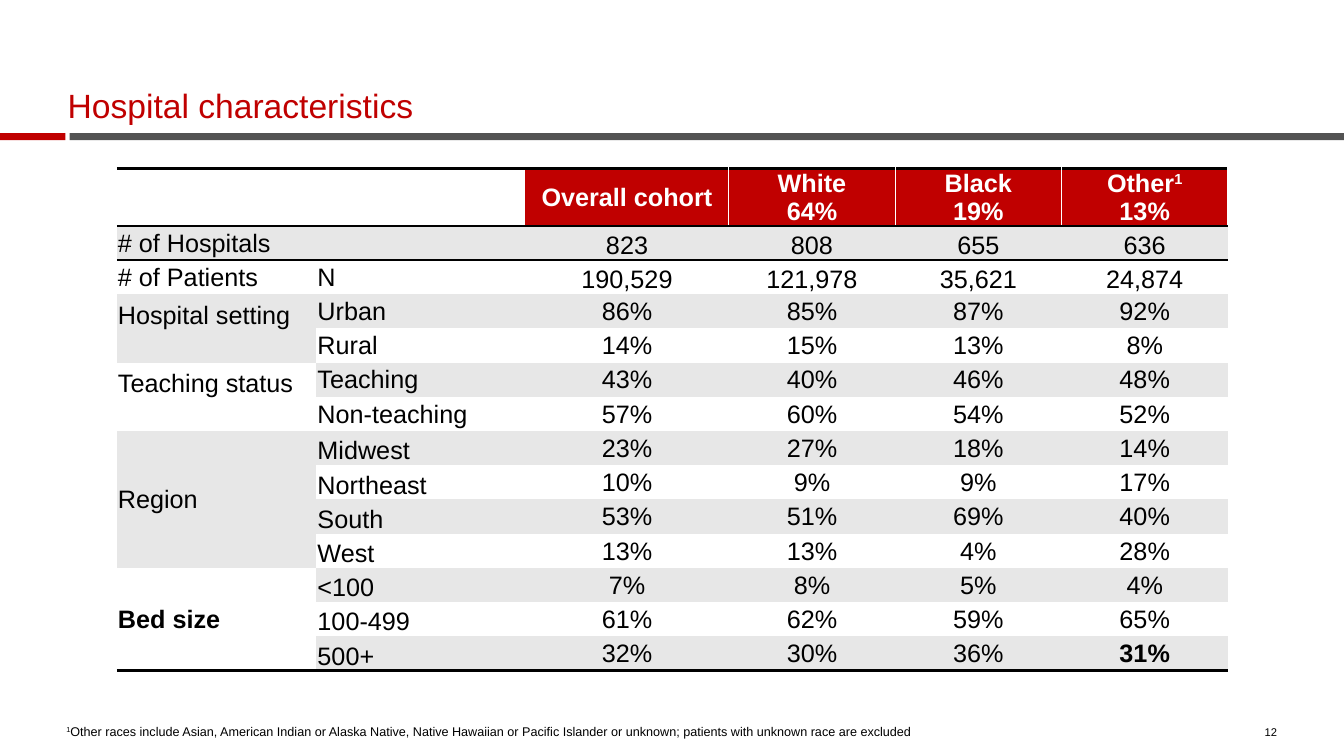
"""Build the hospital characteristics slide."""
from dataclasses import dataclass
from itertools import accumulate

from lxml.etree import SubElement as Sub
from pptx import Presentation
from pptx.dml.color import RGBColor
from pptx.enum.shapes import MSO_SHAPE as Shape
from pptx.enum.text import MSO_ANCHOR as Anchor, MSO_AUTO_SIZE as Fit, PP_ALIGN as Align
from pptx.oxml.ns import qn
from pptx.util import Emu, Inches, Pt

RED = RGBColor(0xC0, 0x00, 0x00)
SLATE = RGBColor(0x53, 0x53, 0x53)
GREY = RGBColor(0xE7, 0xE7, 0xE7)
WHITE = RGBColor(0xFF, 0xFF, 0xFF)
BLACK = RGBColor(0x00, 0x00, 0x00)
WIDE, HIGH = Inches(13.33), Inches(7.5)
PLAIN = "{2D5ABB26-0587-4C30-8999-92F81FD0307C}"


@dataclass
class Box:
    """A frame in percent of the slide's width and height."""
    x: float
    y: float
    w: float
    h: float

    def emu(self) -> tuple[Emu, Emu, Emu, Emu]:
        """Give the frame in slide units."""
        return across(self.x), down(self.y), across(self.w), down(self.h)


@dataclass
class Style:
    """How a paragraph looks."""
    size: float = 18
    color: RGBColor = BLACK
    bold: bool = False
    align: Align = Align.LEFT
    space: float = 1.0


@dataclass
class Group:
    """A labelled block of table rows."""
    label: str
    rows: list[list[str]]
    bold: bool = False
    low_name: bool = False
    low_value: bool = False
    lift: float = 0


@dataclass
class Bar:
    """A coloured strip under the title."""
    box: Box
    color: RGBColor


BARS = [Bar(Box(5.18, 17.6, 94.82, 0.93), SLATE), Bar(Box(0, 17.6, 4.88, 0.93), RED)]
COLS = [14.85, 15.53, 15.15, 12.38, 12.38, 12.38]
HEAD_H, ROW_H = 7.6, 4.53
HEADS = ["Overall cohort", "White\n64%", "Black\n19%", "Other¹\n13%"]
GROUPS = [
    Group("# of Hospitals", [["", "823", "808", "655", "636"]], low_value=True),
    Group("# of Patients", [["N", "190,529", "121,978", "35,621", "24,874"]], low_value=True),
    Group("Hospital setting", [["Urban", "86%", "85%", "87%", "92%"],
                               ["Rural", "14%", "15%", "13%", "8%"]], lift=0.27),
    Group("Teaching status", [["Teaching", "43%", "40%", "46%", "48%"],
                              ["Non-teaching", "57%", "60%", "54%", "52%"]], lift=0.27),
    Group("Region", [["Midwest", "23%", "27%", "18%", "14%"],
                     ["Northeast", "10%", "9%", "9%", "17%"],
                     ["South", "53%", "51%", "69%", "40%"],
                     ["West", "13%", "13%", "4%", "28%"]], low_name=True),
    Group("Bed size", [["<100", "7%", "8%", "5%", "4%"],
                       ["100-499", "61%", "62%", "59%", "65%"],
                       ["500+", "32%", "30%", "36%", "31%"]], bold=True, low_name=True),
]
STRONG = (13, 5)
NOTE = ("¹Other races include Asian, American Indian or Alaska Native, Native Hawaiian or "
        "Pacific Islander or unknown; patients with unknown race are excluded")


def across(share: float) -> Emu:
    """Turn a percent of the slide's width into a length."""
    return Emu(round(WIDE * share / 100))


def down(share: float) -> Emu:
    """Turn a percent of the slide's height into a length."""
    return Emu(round(HIGH * share / 100))


def write(frame, text: str, style: Style) -> None:
    """Fill a text frame, one paragraph a line, raising each ¹."""
    for at, line in enumerate(text.split("\n")):
        par = frame.add_paragraph() if at else frame.paragraphs[0]
        par.alignment, par.line_spacing = style.align, style.space
        font = par.font
        font.name, font.size, font.bold = "Arial", Pt(style.size), style.bold
        font.color.rgb = style.color
        for part in filter(None, line.partition("¹")):
            run = par.add_run()
            run.text = part.replace("¹", "1")
            if part == "¹":
                run._r.get_or_add_rPr().set("baseline", "30000")


def label(slide, box: Box, text: str, style: Style, inset: bool) -> None:
    """Add a wrapped text box."""
    frame = slide.shapes.add_textbox(*box.emu()).text_frame
    frame.word_wrap = True
    if not inset:
        frame.margin_left = frame.margin_right = frame.margin_top = frame.margin_bottom = 0
    write(frame, text, style)


def edge(cell, side: str, color: RGBColor, width: float) -> None:
    """Rule one side of a cell."""
    line = Sub(cell._tc.get_or_add_tcPr(), qn(f"a:ln{side}"), w=str(Pt(width)))
    Sub(Sub(line, qn("a:solidFill")), qn("a:srgbClr"), val=str(color))


def dress(cell, text: str, style: Style, fill: RGBColor, low: bool = False,
          lift: float = 0) -> None:
    """Set a cell's margins, fill and text."""
    cell.margin_left = cell.margin_right = cell.margin_top = Inches(0.01)
    cell.margin_bottom = Inches(lift)
    cell.vertical_anchor = Anchor.BOTTOM if low else Anchor.MIDDLE
    cell.fill.solid()
    cell.fill.fore_color.rgb = fill
    write(cell.text_frame, text, style)


def rule(table, last: int) -> None:
    """Draw the black rules and the white gaps of the heading."""
    for col in range(len(COLS)):
        top = table.cell(0, col)
        if col > 2:
            edge(top, "L", WHITE, 1)
        if 2 <= col < len(COLS) - 1:
            edge(top, "R", WHITE, 1)
        for side in "TB":
            edge(top, side, BLACK, 2)
        edge(table.cell(1, col), "T", BLACK, 2)
        edge(table.cell(last, col), "B", BLACK, 2)
    edge(table.cell(last + 1 - len(GROUPS[-1].rows), 0), "B", BLACK, 2)


def chart(slide) -> None:
    """Add the table of hospital traits."""
    sizes = [len(group.rows) for group in GROUPS]
    last = sum(sizes)
    box = Box(8.7, 22.27, sum(COLS), HEAD_H + last * ROW_H)
    table = slide.shapes.add_table(last + 1, len(COLS), *box.emu()).table
    table.first_row = table.horz_banding = False
    table._tbl.tblPr.find(qn("a:tableStyleId")).text = PLAIN
    for col, share in zip(table.columns, COLS):
        col.width = across(share)
    for at, row in enumerate(table.rows):
        row.height = down(ROW_H if at else HEAD_H)
    rule(table, last)
    head = Style(color=WHITE, bold=True, align=Align.CENTER)
    for col, text in enumerate(["", ""] + HEADS):
        dress(table.cell(0, col), text, head, RED if col > 1 else WHITE)
    table.cell(0, 0).merge(table.cell(0, 1))
    starts = accumulate(sizes, initial=1)
    for nth, (group, start) in enumerate(zip(GROUPS, starts)):
        tint = WHITE if nth % 2 else GREY
        for row, texts in enumerate(group.rows, start):
            band = GREY if row % 2 else WHITE
            name = group.label if row == start else ""
            dress(table.cell(row, 0), name, Style(bold=group.bold), tint, lift=group.lift
                  if row == start else 0)
            dress(table.cell(row, 1), texts[0], Style(), band, group.low_name)
            for col, text in enumerate(texts[1:], 2):
                style = Style(bold=(row, col) == STRONG, align=Align.CENTER)
                dress(table.cell(row, col), text, style, band, group.low_value)
        if len(group.rows) > 1:
            table.cell(start, 0).merge(table.cell(start + len(group.rows) - 1, 0))


def main() -> None:
    """Build and save the deck."""
    deck = Presentation()
    deck.slide_width, deck.slide_height = WIDE, HIGH
    slide = deck.slides.add_slide(deck.slide_layouts[5])
    for bar in BARS:
        strip = slide.shapes.add_shape(Shape.RECTANGLE, *bar.box.emu())
        strip.shadow.inherit = False
        strip.fill.solid()
        strip.fill.fore_color.rgb = bar.color
        strip.line.fill.background()
    title = slide.shapes.title
    title.left, title.top, title.width, title.height = Box(5.03, 6.8, 90, 9.87).emu()
    frame = title.text_frame
    frame.margin_left = frame.margin_right = frame.margin_top = frame.margin_bottom = 0
    frame.vertical_anchor, frame.auto_size = Anchor.BOTTOM, Fit.NONE
    write(frame, "Hospital characteristics", Style(24, RED, space=0.9))
    chart(slide)
    label(slide, Box(4.2, 95.07, 82.88, 3.33), NOTE, Style(9), True)
    label(slide, Box(92.33, 96.13, 2.7, 1.6), "12", Style(8, align=Align.RIGHT, space=0.9), False)
    deck.save("out.pptx")


if __name__ == "__main__":
    main()
